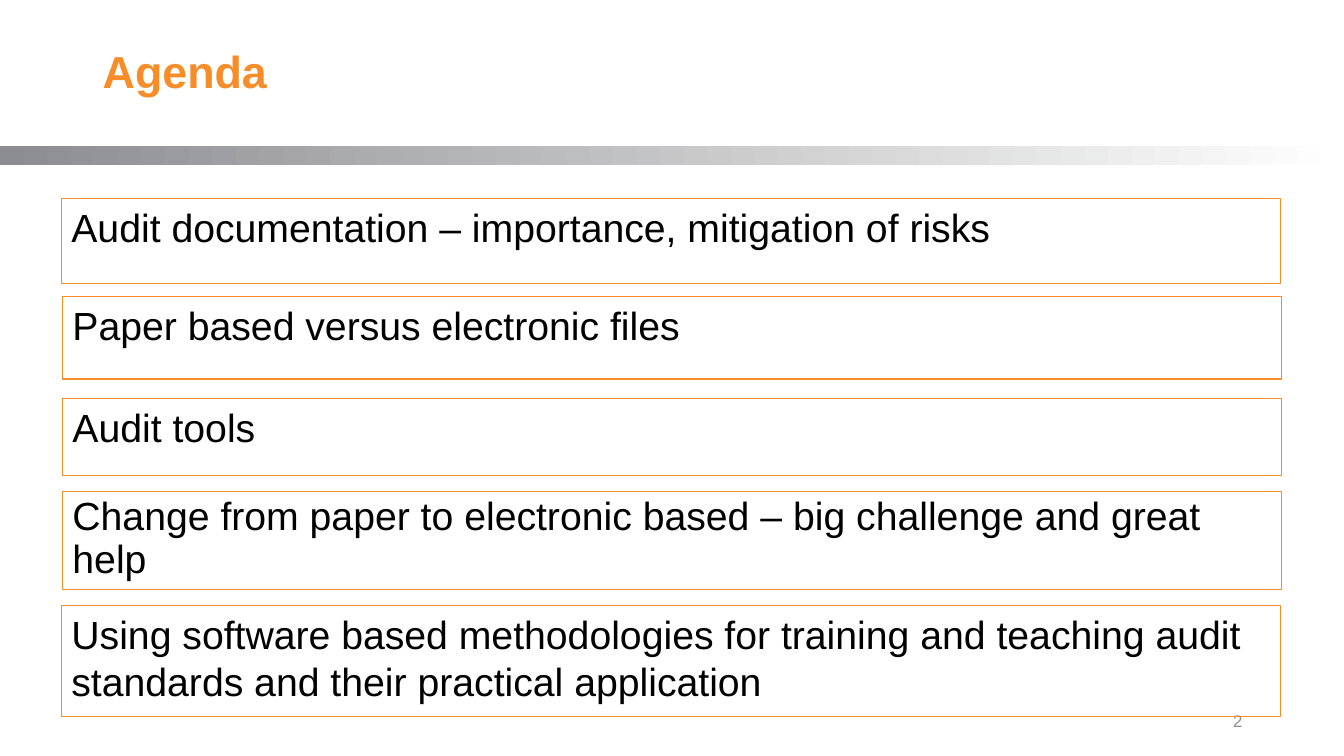
from pptx import Presentation
from pptx.dml.color import RGBColor
from pptx.enum.shapes import MSO_SHAPE
from pptx.enum.text import MSO_ANCHOR, PP_ALIGN
from pptx.util import Pt

PX = 9144  # 100 px to the inch
ORANGE = RGBColor(0xF7, 0x8D, 0x28)
GRAY = RGBColor(0x8C, 0x8D, 0x90)
BLACK = RGBColor(0, 0, 0)
WHITE = RGBColor(0xFF, 0xFF, 0xFF)

# left, top, height, line spacing, text
AGENDA = [
    (61, 197, 84, 1.0, "Audit documentation – importance, mitigation of risks"),
    (62, 294, 82, 1.0, "Paper based versus electronic files"),
    (62, 395, 77, 1.0, "Audit tools"),
    (62, 488, 97, 0.9, "Change from paper to electronic based – big challenge and great help"),
    (61, 601, 110, 1.0, "Using software based methodologies for training and teaching "
                        "audit standards and their practical application"),
]


def to_emu(*lengths):
    return [length * PX for length in lengths]


def add_text(page, area, text, size, color, bold=False,
             align=PP_ALIGN.LEFT, anchor=MSO_ANCHOR.MIDDLE, spacing=1.0):
    box = page.shapes.add_textbox(*to_emu(*area))
    frame = box.text_frame
    frame.word_wrap = True
    frame.vertical_anchor = anchor
    para = frame.paragraphs[0]
    para.text = text
    para.alignment = align
    para.line_spacing = spacing
    font = para.font
    font.name = "Arial"
    font.size = Pt(size)
    font.bold = bold
    font.color.rgb = color
    return box


def add_divider(page):
    band = page.shapes.add_shape(MSO_SHAPE.RECTANGLE, *to_emu(0, 145, 1333, 19))
    band.shadow.inherit = False
    band.line.fill.background()
    band.fill.gradient()
    band.fill.gradient_angle = 0
    for stop, position, color in zip(band.fill.gradient_stops, (0, 1), (GRAY, WHITE)):
        stop.position = position
        stop.color.rgb = color


def add_agenda_item(page, left, top, height, spacing, text):
    box = add_text(page, (left, top, 1209, height), text, 28, BLACK,
                   anchor=MSO_ANCHOR.TOP, spacing=spacing)
    box.line.color.rgb = ORANGE
    box.line.width = Pt(0.75)


def main():
    deck = Presentation()
    deck.slide_width, deck.slide_height = to_emu(1333, 750)
    page = deck.slides.add_slide(deck.slide_layouts[6])
    add_divider(page)
    add_text(page, (942, 695, 300, 40), "2", 12, GRAY, align=PP_ALIGN.RIGHT)
    add_text(page, (92, 26, 1150, 95), "Agenda", 32, ORANGE, bold=True, spacing=0.9)
    for item in AGENDA:
        add_agenda_item(page, *item)
    deck.save("out.pptx")


if __name__ == "__main__":
    main()
